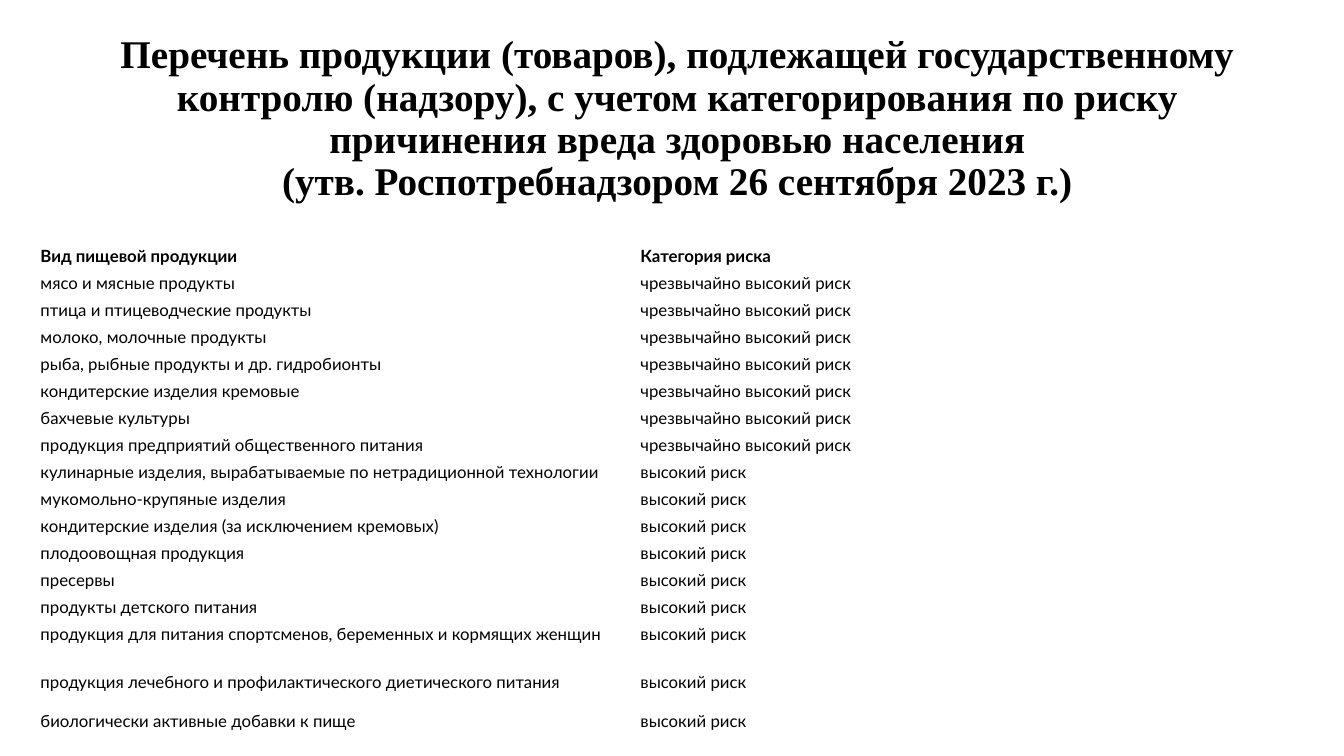
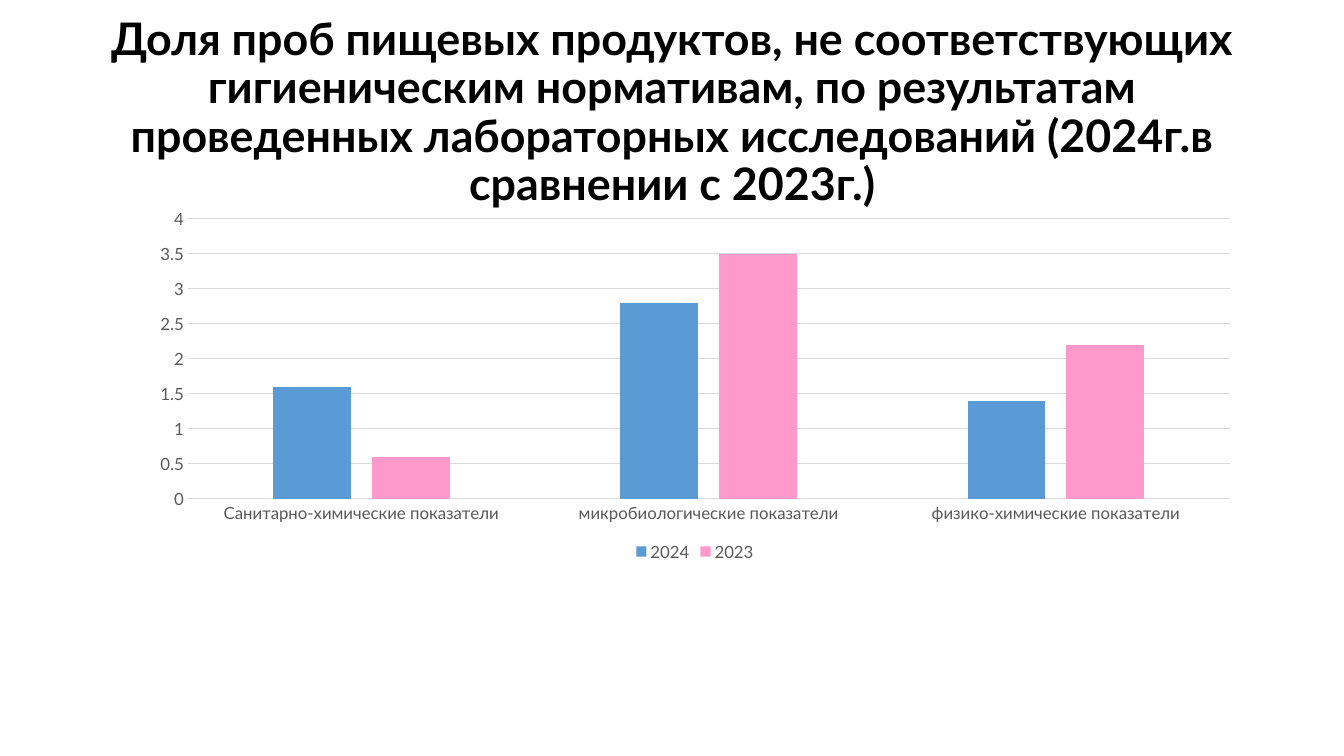
from pptx import Presentation
from pptx.chart.data import CategoryChartData
from pptx.dml.color import RGBColor
from pptx.enum.chart import XL_CHART_TYPE as ChartType
from pptx.enum.chart import XL_LEGEND_POSITION as LegendPosition
from pptx.enum.chart import XL_TICK_MARK as TickMark
from pptx.enum.text import MSO_ANCHOR as Anchor
from pptx.enum.text import PP_ALIGN as Align
from pptx.util import Cm, Pt

COLORS = {
    "text": "000000",
    "background": "FFFFFF",
    "axis_text": "595959",
    "grid": "D9D9D9",
    "year_2024": "5B9BD5",
    "year_2023": "FF99CC",
}
BODY_FONT = "Lato"
SERIF_FONT = "Times New Roman"

# Products by risk category
EXTREME_RISK = "чрезвычайно высокий риск"
HIGH_RISK = "высокий риск"
PRODUCTS = {
    EXTREME_RISK: [
        "мясо и мясные продукты",
        "птица и птицеводческие продукты",
        "молоко, молочные продукты",
        "рыба, рыбные продукты и др. гидробионты",
        "кондитерские изделия кремовые",
        "бахчевые культуры",
        "продукция предприятий общественного питания",
    ],
    HIGH_RISK: [
        "кулинарные изделия, вырабатываемые по нетрадиционной технологии",
        "мукомольно-крупяные изделия",
        "кондитерские изделия (за исключением кремовых)",
        "плодоовощная продукция",
        "пресервы",
        "продукты детского питания",
        "продукция для питания спортсменов, беременных и кормящих женщин",
        "продукция лечебного и профилактического диетического питания",
        "биологически активные добавки к пище",
    ],
}
ROW_HEIGHT = 0.68
TALL_ROWS = {14: 1.22, 15: 0.99}

# Share of failed samples
INDICATORS = [
    "Санитарно-химические показатели",
    "микробиологические показатели",
    "физико-химические показатели",
]
SHARES = {"2024": (1.6, 2.8, 1.4), "2023": (0.6, 3.5, 2.2)}


def color(name):
    return RGBColor.from_string(COLORS[name])


def style_font(font, size, color_name="text", name=BODY_FONT, bold=False):
    font.name = name
    font.size = Pt(size)
    font.bold = bold
    font.color.rgb = color(color_name)


def add_slide(presentation):
    return presentation.slides.add_slide(presentation.slide_layouts[6])


def add_title(slide, text, left, top, height, size, font_name=BODY_FONT):
    box = slide.shapes.add_textbox(Cm(left), Cm(top), Cm(29.21), Cm(height))
    frame = box.text_frame
    frame.word_wrap = True
    frame.vertical_anchor = Anchor.MIDDLE
    paragraph = frame.paragraphs[0]
    paragraph.text = text
    paragraph.alignment = Align.CENTER
    paragraph.line_spacing = 0.9
    style_font(paragraph.font, size, name=font_name, bold=True)


def fill_cell(cell, text, bold):
    cell.fill.solid()
    cell.fill.fore_color.rgb = color("background")
    cell.margin_left = cell.margin_right = Cm(0.13)
    cell.margin_top = cell.margin_bottom = Cm(0.07)
    paragraph = cell.text_frame.paragraphs[0]
    paragraph.text = text
    style_font(paragraph.font, 12, bold=bold)


def add_risk_table(slide):
    rows = [("Вид пищевой продукции", "Категория риска")]
    rows += [(product, risk) for risk, products in PRODUCTS.items() for product in products]
    heights = [TALL_ROWS.get(index, ROW_HEIGHT) for index in range(len(rows))]
    table = slide.shapes.add_table(
        len(rows), 2, Cm(0.89), Cm(6.12), Cm(30.24), Cm(sum(heights))
    ).table
    table.horz_banding = False
    for index, (texts, height) in enumerate(zip(rows, heights)):
        table.rows[index].height = Cm(height)
        for cell, text in zip(table.rows[index].cells, texts):
            fill_cell(cell, text, bold=index == 0)


def style_line(line):
    line.color.rgb = color("grid")
    line.width = Pt(0.75)


def add_share_chart(slide):
    data = CategoryChartData()
    data.categories = INDICATORS
    for year, values in SHARES.items():
        data.add_series(year, values)
    chart = slide.shapes.add_chart(
        ChartType.COLUMN_CLUSTERED, Cm(3.48), Cm(5.08), Cm(28.07), Cm(9.17), data
    ).chart
    chart.has_title = False
    style_font(chart.font, 10)

    # Columns
    plot = chart.plots[0]
    plot.gap_width = 219
    plot.overlap = -27
    plot.vary_by_categories = False
    for series in plot.series:
        series.format.fill.solid()
        series.format.fill.fore_color.rgb = color(f"year_{series.name}")

    # Axes
    for axis in (chart.category_axis, chart.value_axis):
        axis.major_tick_mark = axis.minor_tick_mark = TickMark.NONE
        style_font(axis.tick_labels.font, 12, "axis_text")
    style_line(chart.category_axis.format.line)
    value_axis = chart.value_axis
    value_axis.minimum_scale = 0
    value_axis.maximum_scale = 4
    value_axis.major_unit = 0.5
    value_axis.format.line.fill.background()
    style_line(value_axis.major_gridlines.format.line)

    # Legend
    chart.has_legend = True
    chart.legend.position = LegendPosition.BOTTOM
    chart.legend.include_in_layout = False
    style_font(chart.legend.font, 12, "axis_text")


def main():
    presentation = Presentation()
    presentation.slide_width = Cm(33.87)
    presentation.slide_height = Cm(19.05)

    # Risk categories
    slide = add_slide(presentation)
    add_title(
        slide,
        "Перечень продукции (товаров), подлежащей государственному контролю (надзору), "
        "с учетом категорирования по риску причинения вреда здоровью населения\v"
        "(утв. Роспотребнадзором 26 сентября 2023 г.)",
        left=2.46, top=0.97, height=4.09, size=28, font_name=SERIF_FONT,
    )
    add_risk_table(slide)

    # Laboratory results
    slide = add_slide(presentation)
    add_title(
        slide,
        "Доля проб пищевых продуктов, не соответствующих гигиеническим нормативам, "
        "по результатам проведенных лабораторных исследований (2024г.в сравнении с 2023г.)",
        left=2.34, top=1.02, height=3.68, size=32,
    )
    add_share_chart(slide)

    presentation.save("out.pptx")


if __name__ == "__main__":
    main()
